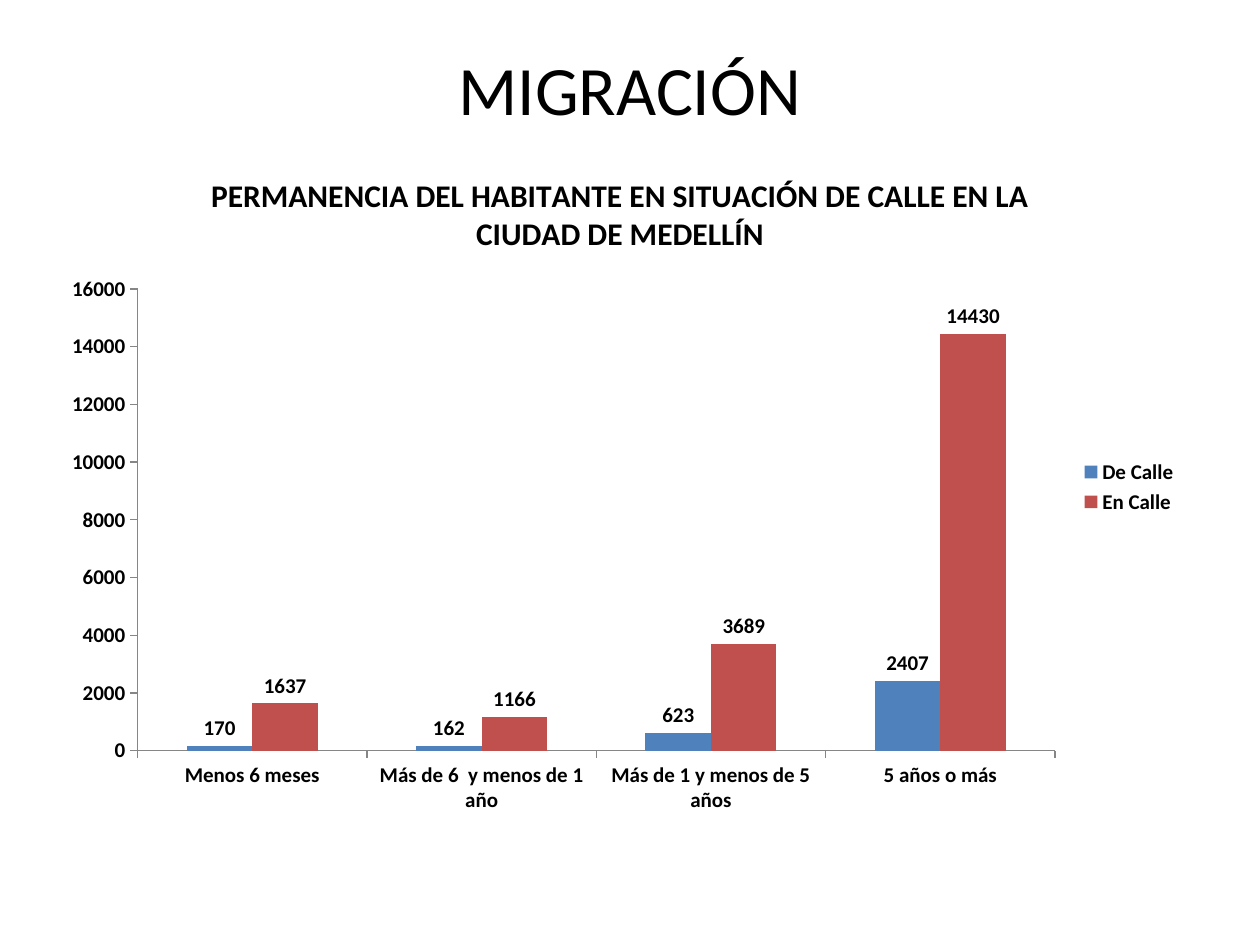
import pptx
import pptx.chart.data
import pptx.dml.color
import pptx.enum.chart
import pptx.enum.text
import pptx.util

Inches = pptx.util.Inches
FONT = "Calibri"
BLACK = "000000"
AXIS_GRAY = "868686"


def color(hex_value):
    return pptx.dml.color.RGBColor.from_string(hex_value)


class SlideBuilder:
    """Holds the text style and the current slide."""

    def __init__(self, presentation):
        self.slide = presentation.slides.add_slide(presentation.slide_layouts[5])

    def style(self, font, size, bold):
        values = {"name": FONT, "size": pptx.util.Pt(size), "bold": bold}
        for attribute, value in values.items():
            setattr(font, attribute, value)
        font.color.rgb = color(BLACK)

    def title(self, text, left, top, width, height, size):
        shape = self.slide.shapes.title
        box = {"left": left, "top": top, "width": width, "height": height}
        for attribute, value in box.items():
            setattr(shape, attribute, Inches(value))
        frame = shape.text_frame
        frame.text = text
        frame.vertical_anchor = pptx.enum.text.MSO_ANCHOR.MIDDLE
        paragraph = frame.paragraphs[0]
        paragraph.alignment = pptx.enum.text.PP_ALIGN.CENTER
        self.style(paragraph.runs[0].font, size, False)

    def column_chart(self, heading, categories, series, left, top, width, height):
        data = pptx.chart.data.CategoryChartData()
        data.categories = categories
        for name, values, _ in series:
            data.add_series(name, values)
        chart = self.slide.shapes.add_chart(
            pptx.enum.chart.XL_CHART_TYPE.COLUMN_CLUSTERED,
            Inches(left), Inches(top), Inches(width), Inches(height), data,
        ).chart
        self.style(chart.font, 12, True)

        # Heading and legend
        chart.has_title = True
        chart.chart_title.include_in_layout = False
        frame = chart.chart_title.text_frame
        frame.text = heading
        self.style(frame.paragraphs[0].runs[0].font, 18, True)
        chart.has_legend = True
        chart.legend.position = pptx.enum.chart.XL_LEGEND_POSITION.RIGHT
        chart.legend.include_in_layout = False

        # Axes
        for axis in (chart.category_axis, chart.value_axis):
            axis.has_major_gridlines = False
            axis.major_tick_mark = pptx.enum.chart.XL_TICK_MARK.OUTSIDE
            axis.minor_tick_mark = pptx.enum.chart.XL_TICK_MARK.NONE
            axis.format.line.color.rgb = color(AXIS_GRAY)
        chart.value_axis.minimum_scale = 0
        chart.value_axis.maximum_scale = 16000
        chart.value_axis.major_unit = 2000

        # Columns and value labels
        plot = chart.plots[0]
        plot.vary_by_categories = False
        plot.gap_width = 150
        plot.overlap = 0
        for columns, (_, _, fill) in zip(plot.series, series):
            columns.format.fill.solid()
            columns.format.fill.fore_color.rgb = color(fill)
            labels = columns.data_labels
            labels.show_value = True
            labels.position = pptx.enum.chart.XL_LABEL_POSITION.OUTSIDE_END
            self.style(labels.font, 12, True)


def main():
    presentation = pptx.Presentation()
    presentation.slide_width = Inches(10)
    presentation.slide_height = Inches(7.5)
    builder = SlideBuilder(presentation)

    builder.title("MIGRACIÓN", 0.5, 0.3, 9, 0.79, size=39.6)
    builder.column_chart(
        "PERMANENCIA DEL HABITANTE EN SITUACIÓN DE CALLE EN LA CIUDAD DE MEDELLÍN",
        ["Menos 6 meses", "Más de 6  y menos de 1 año",
         "Más de 1 y menos de 5 años", "5 años o más"],
        [("De Calle", (170, 162, 623, 2407), "4F81BD"),
         ("En Calle", (1637, 1166, 3689, 14430), "C0504D")],
        0.39, 1.17, 9.06, 5.39,
    )
    presentation.save("out.pptx")


if __name__ == "__main__":
    main()
